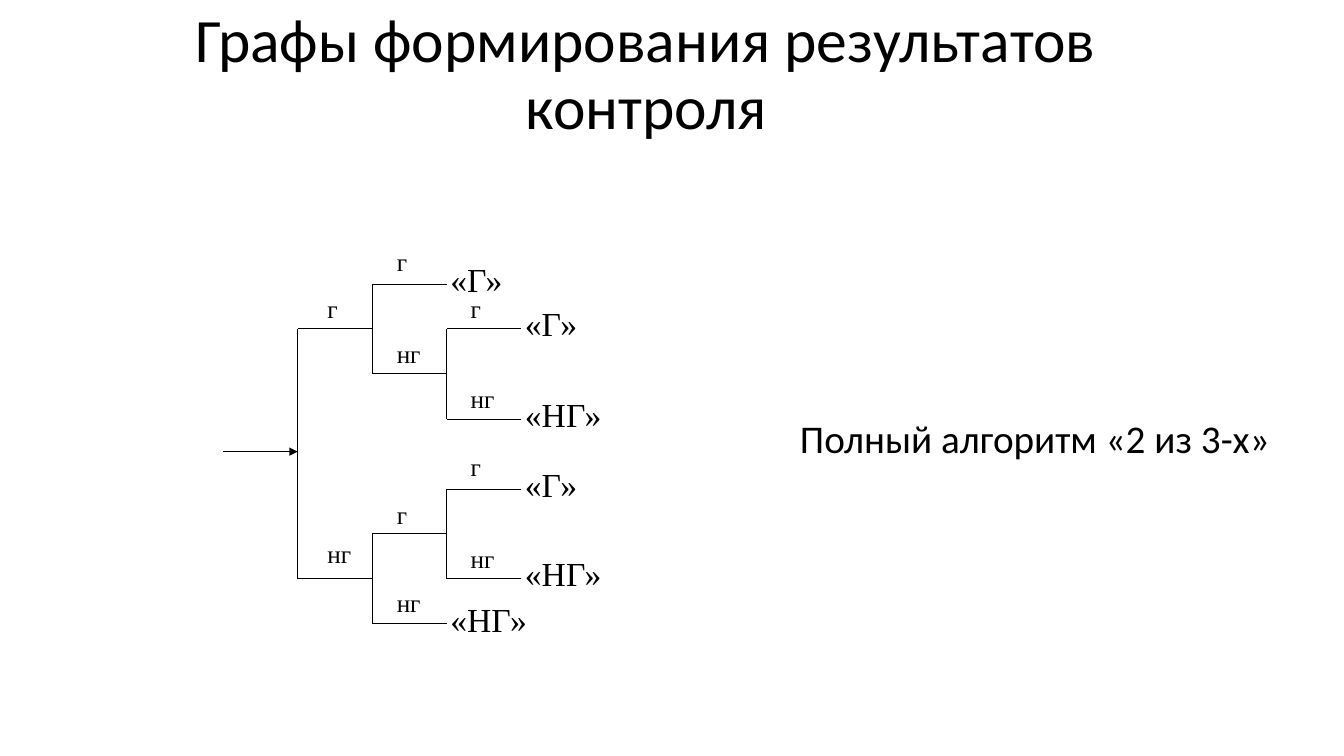
import pptx
import pptx.util
import pptx.dml.color
import pptx.enum.shapes
import pptx.enum.text
import pptx.oxml.ns
import lxml.etree

Cm, Pt = pptx.util.Cm, pptx.util.Pt
COLORS = {"ink": "000000"}
INK = pptx.dml.color.RGBColor.from_string(COLORS["ink"])

prs = pptx.Presentation()
prs.slide_width, prs.slide_height = Cm(33.87), Cm(19.05)
s = prs.slides.add_slide(prs.slide_layouts[5])


def add_text(text, x, y, w, h, size, font="Times New Roman", sp=None):
    """Write text into the placeholder sp, or into a new text box."""
    if sp is None:
        sp = s.shapes.add_textbox(0, 0, 0, 0)
    sp.left, sp.top, sp.width, sp.height = Cm(x), Cm(y), Cm(w), Cm(h)
    tf = sp.text_frame
    tf.word_wrap = True
    tf.auto_size = pptx.enum.text.MSO_AUTO_SIZE.NONE
    p = tf.paragraphs[0]
    r = p.add_run()
    r.text = text
    r.font.size, r.font.name = Pt(size), font
    r.font.color.rgb = INK
    return tf


def add_line(x1, y1, x2, y2):
    line = s.shapes.add_connector(pptx.enum.shapes.MSO_CONNECTOR.STRAIGHT,
                                  Cm(x1), Cm(y1), Cm(x2), Cm(y2))
    line.line.color.rgb = INK
    line.line.width = Pt(0.5)
    lxml.etree.SubElement(line._element.spPr, pptx.oxml.ns.qn("a:effectLst"))
    return line


tf = add_text("Графы формирования результатов контроля", 1.68, 0.08, 29.21, 3.68, 44,
              font="Calibri", sp=s.shapes.title)
tf.vertical_anchor = pptx.enum.text.MSO_ANCHOR.MIDDLE
tf.paragraphs[0].alignment = pptx.enum.text.PP_ALIGN.CENTER
tf.paragraphs[0].line_spacing = 0.9

add_text("Полный алгоритм «2 из 3-х»", 19.91, 10.31, 12.83, 1.45, 28, font="Calibri")

# Decision tree: each branch rises or falls from its node, then runs one step right
ROOT_X, ROOT_Y, STEP = 7.5, 11.38, 1.88
LABEL_X = [8.0, 9.75, 11.61]
BRANCHES = [  # level, node y, branch y, label, label top, outcome
    (0, ROOT_Y, 8.28, "г", 7.26, None),
    (0, ROOT_Y, 14.58, "нг", 13.44, None),
    (1, 8.28, 7.16, "г", 6.07, "«Г»"),
    (1, 8.28, 9.42, "нг", 8.41, None),
    (1, 14.58, 13.44, "г", 12.47, None),
    (1, 14.58, 15.72, "нг", 14.68, "«НГ»"),
    (2, 9.42, 8.28, "г", 7.26, "«Г»"),
    (2, 9.42, 10.57, "нг", 9.53, "«НГ»"),
    (2, 13.44, 12.32, "г", 11.25, "«Г»"),
    (2, 13.44, 14.58, "нг", 13.56, "«НГ»"),
]

entry = add_line(ROOT_X - STEP, ROOT_Y, ROOT_X, ROOT_Y)
ln = entry.line._get_or_add_ln()
lxml.etree.SubElement(ln, pptx.oxml.ns.qn("a:tailEnd"), type="triangle")

for level, node_y, branch_y, label, label_top, outcome in BRANCHES:
    x = ROOT_X + level * STEP
    add_line(x, node_y, x, branch_y)
    add_line(x, branch_y, x + STEP, branch_y)
    add_text(label, LABEL_X[level], label_top, 1.12, 1.02, 18)
    if outcome:
        add_text(outcome, x + STEP - 0.16, branch_y - 0.76, 2.7, 1.27, 24)

prs.save("out.pptx")
